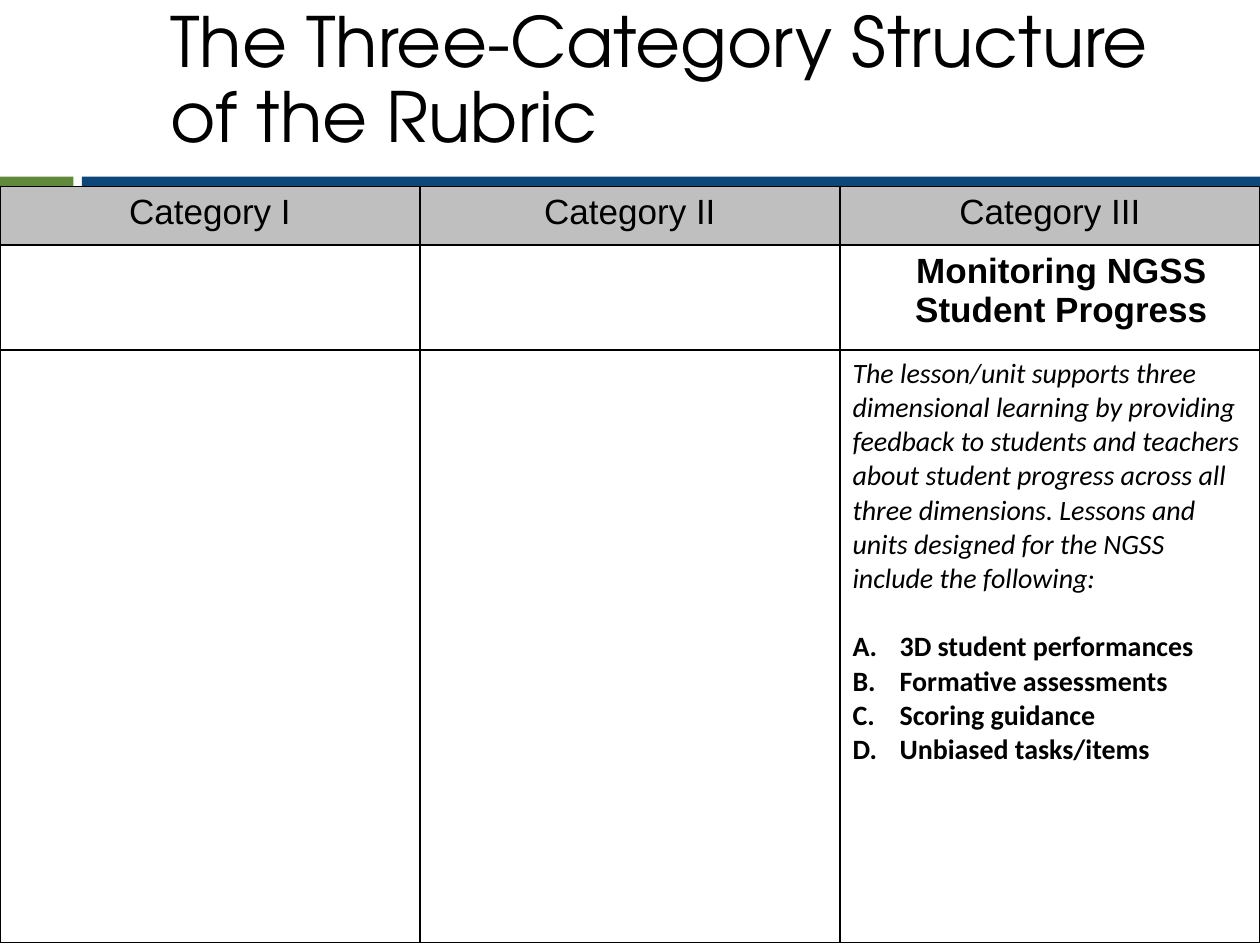
from pptx import Presentation
from pptx.dml.color import RGBColor
from pptx.enum.shapes import MSO_SHAPE as Shape
from pptx.enum.text import MSO_ANCHOR as Anchor, MSO_AUTO_SIZE as AutoSize, PP_ALIGN as Align
from pptx.oxml import parse_xml
from pptx.oxml.ns import nsdecls
from pptx.util import Cm, Pt

BLACK, WHITE, GRAY = "000000", "FFFFFF", "BFBFBF"
GREEN, BLUE = "61893C", "0D4679"

HEADINGS = ["Category I", "Category II", "Category III"]
TOPIC = "Monitoring NGSS Student Progress"
INTRO = (
    "The lesson/unit supports three dimensional learning by providing feedback "
    "to students and teachers about student progress across all three dimensions. "
    "Lessons and units designed for the NGSS include the following:"
)
CRITERIA = [
    "3D student performances",
    "Formative assessments",
    "Scoring guidance",
    "Unbiased tasks/items",
]


def color(value):
    return RGBColor.from_string(value)


class RubricSlide:
    formats = {
        "title": {"name": "TeX Gyre Adventor", "size": Pt(39.6), "bold": False},
        "heading": {"name": "Arial", "size": Pt(20), "bold": False},
        "topic": {"name": "Arial", "size": Pt(20), "bold": True},
        "intro": {"name": "Calibri", "size": Pt(16), "bold": False, "italic": True},
        "criterion": {"name": "Calibri", "size": Pt(16), "bold": True, "italic": False},
    }

    def __init__(self, deck):
        self.page = deck.slides.add_slide(deck.slide_layouts[5])

    def add_text(self, para, text, style):
        span = para.add_run()
        span.text = text
        for key, value in self.formats[style].items():
            setattr(span.font, key, value)
        span.font.color.rgb = color(BLACK)

    def bar(self, left, top, width, height, fill):
        box = self.page.shapes.add_shape(
            Shape.RECTANGLE, Cm(left), Cm(top), Cm(width), Cm(height))
        box.shadow.inherit = False
        box.fill.solid()
        box.fill.fore_color.rgb = color(fill)
        box.line.fill.background()

    def title(self, text, left, top, width, height):
        box = self.page.shapes.title
        place = {"left": left, "top": top, "width": width, "height": height}
        for key, value in place.items():
            setattr(box, key, Cm(value))
        frame = box.text_frame
        frame.word_wrap = True
        frame.auto_size = AutoSize.NONE
        frame.vertical_anchor = Anchor.MIDDLE
        para = frame.paragraphs[0]
        para.alignment = Align.LEFT
        para.line_spacing = 0.9
        self.add_text(para, text, "title")

    def table(self, left, top, width, heights, columns):
        grid = self.page.shapes.add_table(
            len(heights), columns, Cm(left), Cm(top), Cm(width), Cm(sum(heights))).table
        grid.first_row = False
        grid.horz_banding = False
        for row, height in zip(grid.rows, heights):
            row.height = Cm(height)
        for index, row in enumerate(grid.rows):
            for cell in row.cells:
                self.dress(cell, WHITE if index else GRAY)
        return grid

    def dress(self, cell, fill):
        cell.fill.solid()
        cell.fill.fore_color.rgb = color(fill)
        properties = cell._tc.get_or_add_tcPr()
        for position, side in enumerate("LRTB"):
            properties.insert(position, parse_xml(
                f'<a:ln{side} {nsdecls("a")} w="{Pt(1)}"><a:solidFill>'
                f'<a:srgbClr val="{BLACK}"/></a:solidFill></a:ln{side}>'))

    def label(self, cell, text, style, indent=0):
        para = cell.text_frame.paragraphs[0]
        para.alignment = Align.CENTER
        if indent:
            para._p.get_or_add_pPr().set("marL", str(Cm(indent)))
        self.add_text(para, text, style)

    def lettered_list(self, cell, intro, items):
        frame = cell.text_frame
        self.add_text(frame.paragraphs[0], intro, "intro")
        for index, item in enumerate(items):
            para = frame.add_paragraph()
            properties = para._p.get_or_add_pPr()
            properties.set("marL", str(Cm(0.95)))
            properties.set("indent", str(Cm(-0.95)))
            properties.append(parse_xml(
                f'<a:buClr {nsdecls("a")}><a:srgbClr val="{BLACK}"/></a:buClr>'))
            properties.append(parse_xml(
                f'<a:buAutoNum {nsdecls("a")} type="alphaUcPeriod"/>'))
            if index == 0:
                para.space_before = Pt(19.5)
            self.add_text(para, item, "criterion")


def main():
    deck = Presentation()
    deck.slide_width, deck.slide_height = Cm(25.4), Cm(19.05)
    slide = RubricSlide(deck)
    slide.bar(0, 3.56, 1.48, 0.63, GREEN)
    slide.bar(1.65, 3.56, 23.75, 0.63, BLUE)
    grid = slide.table(0, 3.76, 25.4, [1.18, 2.12, 11.94], len(HEADINGS))
    for column, heading in enumerate(HEADINGS):
        slide.label(grid.cell(0, column), heading, "heading")
    slide.label(grid.cell(1, 2), TOPIC, "topic", 0.46)
    slide.lettered_list(grid.cell(2, 2), INTRO, CRITERIA)
    slide.title("The Three-Category Structure of the Rubric", 3.18, 0.3, 21.39, 2.74)
    deck.save("out.pptx")


if __name__ == "__main__":
    main()
